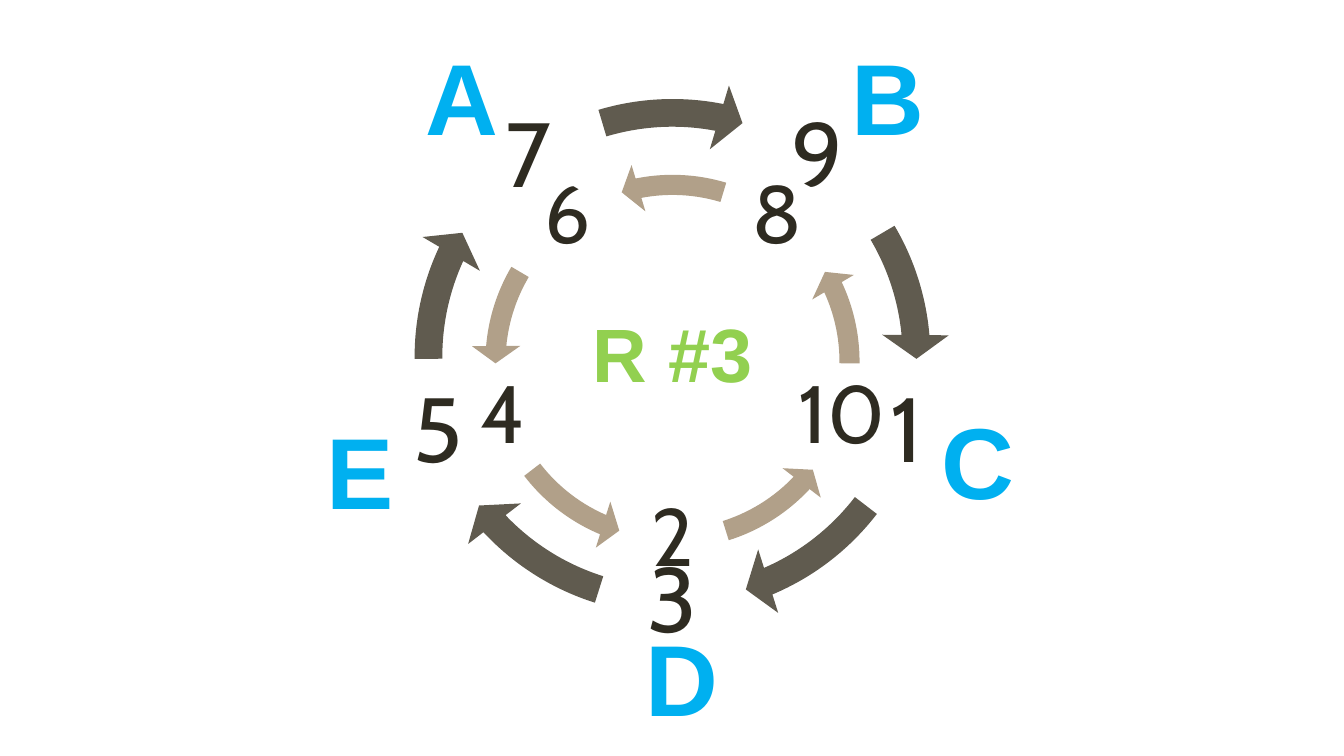
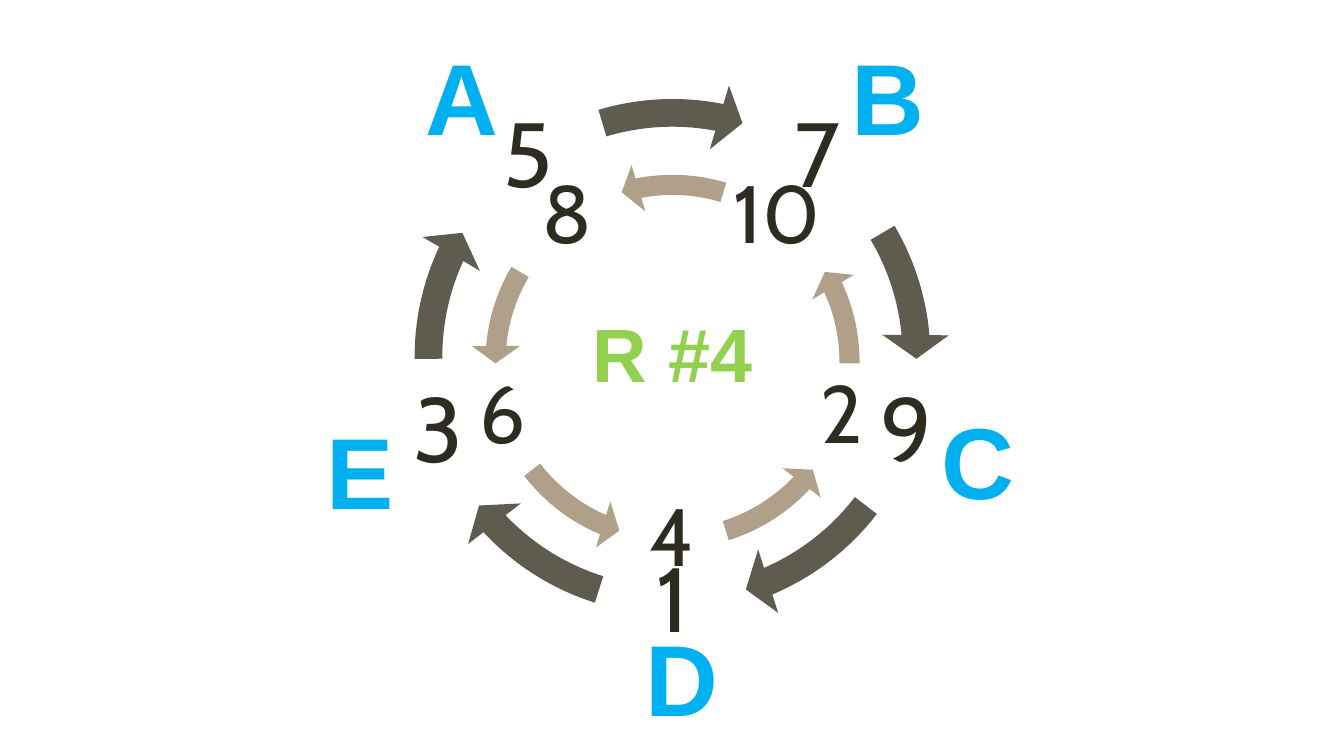
from math import cos, radians, sin

from lxml.etree import SubElement
from pptx import Presentation
from pptx.dml.color import RGBColor
from pptx.enum.shapes import MSO_SHAPE
from pptx.enum.text import MSO_ANCHOR, MSO_AUTO_SIZE, PP_ALIGN
from pptx.oxml.ns import qn
from pptx.util import Inches, Pt

# Shared colours and text styles
INK, DARK, TAN = "2E2B21", "605B4F", "B1A089"
BLUE, GREEN, EDGE = "00B0F0", "92D050", "A9A57C"
DIGIT = {"name": "Cabin"}
LABEL = {"name": "Arial", "bold": True}

# Arrow tip and tail around the ring; a full turn is 216
TURN = 216
ARCS = [(212.93, 197.67), (40.14, 22.54), (82.1, 64.5),
        (122.97, 107.71), (168.65, 151.99)]
MIDX = 6.67

# The inner ring is the outer one mirrored left to right
RINGS = [
    {"kind": MSO_SHAPE.CIRCULAR_ARROW, "fill": DARK, "side": 1, "midy": 3.54,
     "reach": 2.44, "span": 5.5, "box": 1.47, "pad": 0.09, "size": 65,
     "nums": [9, 1, 3, 5, 7]},
    {"kind": MSO_SHAPE.LEFT_CIRCULAR_ARROW, "fill": TAN, "side": -1, "midy": 3.59,
     "reach": 1.77, "span": 3.99, "box": 1.06, "pad": 0.08, "size": 58,
     "nums": [6, 4, 2, 10, 8]},
]
CORNERS = [("A", 4.12, 0.29), ("B", 8.35, 0.29), ("C", 9.24, 3.91),
           ("D", 6.3, 6.06), ("E", 3.14, 4.01)]


def tint(part, code):
    part.rgb = RGBColor.from_string(code)


def write(shapes, text, x, y, wide, high, size, code, style):
    box = shapes.add_textbox(Inches(x), Inches(y), Inches(wide), Inches(high))
    box.text_frame.word_wrap = True
    run = box.text_frame.paragraphs[0].add_run()
    run.text = text
    for key, value in {**style, "size": Pt(size)}.items():
        setattr(run.font, key, value)
    tint(run.font.color, code)
    return box.text_frame, run


deck = Presentation()
deck.slide_width, deck.slide_height = Inches(13.33), Inches(7.5)

for step, title in enumerate(["R #3", "R #4"]):
    slide = deck.slides.add_slide(deck.slide_layouts[6])

    # Two rings of numbers and arrows; numbers move one place per round
    for ring in RINGS:
        group = slide.shapes.add_group_shape()
        nums = ring["nums"][-step:] + ring["nums"][:-step]
        side, box, span = ring["side"], ring["box"], ring["span"]
        pad = Inches(ring["pad"])
        for i, (num, arc) in enumerate(zip(nums, ARCS)):
            angle = radians(72 * i - 54)
            x = MIDX + side * ring["reach"] * cos(angle)
            y = ring["midy"] + ring["reach"] * sin(angle)
            frame, run = write(group.shapes, str(num), x - box / 2, y - box / 2,
                               box, box, ring["size"], INK, DIGIT)
            look = {"vertical_anchor": MSO_ANCHOR.MIDDLE, "margin_left": pad,
                    "margin_right": pad, "margin_top": pad, "margin_bottom": pad}
            for key, value in look.items():
                setattr(frame, key, value)
            line = frame.paragraphs[0]
            line.alignment, line.line_spacing = PP_ALIGN.CENTER, 0.9

            arrow = group.shapes.add_shape(
                ring["kind"], Inches(MIDX - span / 2), Inches(ring["midy"] - span / 2),
                Inches(span), Inches(span))
            ends = arc if side > 0 else [(TURN / 2 - end) % TURN for end in arc]
            for k, value in enumerate([0.05, 3.36, *ends, 0.06]):
                arrow.adjustments[k] = value
            arrow.shadow.inherit = False
            arrow.fill.solid()
            tint(arrow.fill.fore_color, ring["fill"])
            arrow.line.fill.background()

    # Corner letters and round title, with a thin outline
    labels = [(name, x, y, 1.08, 1.31, 72, BLUE) for name, x, y in CORNERS]
    labels.append((title, 5.78, 3, 1.8, 1.01, 54, GREEN))
    for label in labels:
        frame, run = write(slide.shapes, *label, LABEL)
        frame.auto_size = MSO_AUTO_SIZE.SHAPE_TO_FIT_TEXT
        props = run.font._element
        edge = SubElement(props, qn("a:ln"), w=str(Pt(1)))
        fill = SubElement(edge, qn("a:solidFill"))
        SubElement(fill, qn("a:srgbClr"), val=EDGE)
        props.insert(0, edge)

deck.save("out.pptx")
